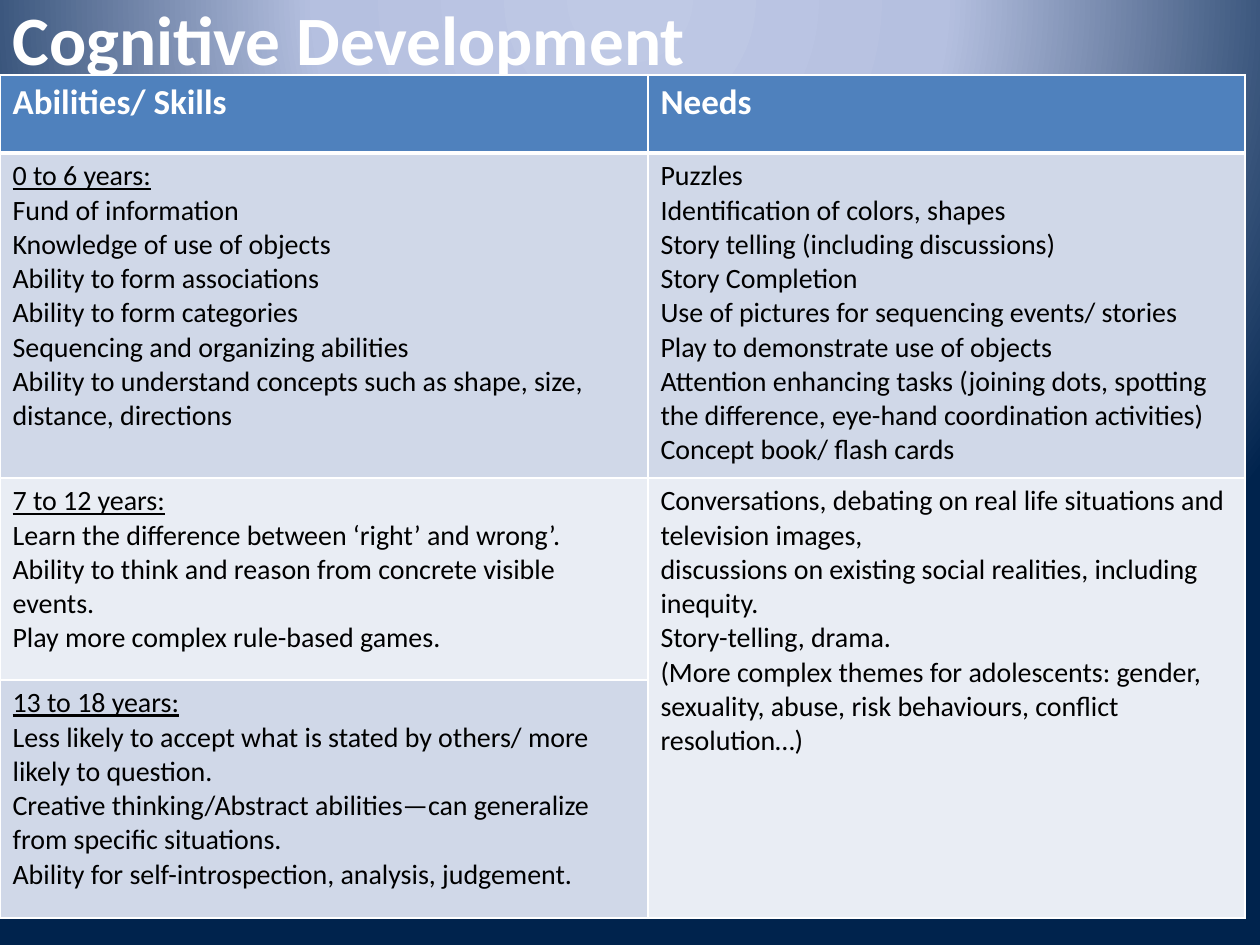
from lxml import etree
from pptx import Presentation
from pptx.dml.color import RGBColor
from pptx.enum.text import MSO_ANCHOR
from pptx.oxml import parse_xml
from pptx.oxml.ns import nsdecls
from pptx.util import Pt

PX = 914400 // 126
FONT = "Calibri"
TITLE = "Cognitive Development"
HEADER = ("Abilities/ Skills", "Needs")
AGES = [
    ("0 to 6 years:", "Fund of information", "Knowledge of use of objects",
     "Ability to form associations", "Ability to form categories",
     "Sequencing and organizing abilities",
     "Ability to understand concepts such as shape, size, distance, directions"),
    ("7 to 12 years:", "Learn the difference between ‘right’ and wrong’.",
     "Ability to think and reason from concrete visible events.",
     "Play more complex rule-based games."),
    ("13 to 18 years:",
     "Less likely to accept what is stated by others/ more likely to question.",
     "Creative thinking/Abstract abilities—can generalize from specific situations.",
     "Ability for self-introspection, analysis, judgement."),
]
NEEDS = [
    ("Puzzles", "Identification of colors, shapes",
     "Story telling (including discussions)", "Story Completion",
     "Use of pictures for sequencing events/ stories",
     "Play to demonstrate use of objects",
     "Attention enhancing tasks (joining dots, spotting the difference, "
     "eye-hand coordination activities)",
     "Concept book/ flash cards"),
    ("Conversations, debating on real life situations and television images,",
     "discussions on existing social realities, including inequity.",
     "Story-telling, drama.",
     "(More complex themes for adolescents: gender, sexuality, abuse, "
     "risk behaviours, conflict resolution…)"),
    (),
]
COLS = (648, 597)
ROWS = (78, 325, 202, 238)
FILLS = ("4F81BD", "D0D8E8", "E9EDF4", "D0D8E8")
STOPS = ((0, "BFC9E5"), (40, "B5C0E0"), (100, "00234D"))


def rgb(color):
    return RGBColor.from_string(color)


def set_background(s):
    fill = s.background.fill
    fill.gradient()
    stops = "".join(f'<a:gs pos="{pos * 1000}"><a:srgbClr val="{c}"/></a:gs>'
                    for pos, c in STOPS)
    grad = parse_xml(
        f'<a:gradFill {nsdecls("a")} rotWithShape="1"><a:gsLst>{stops}</a:gsLst>'
        '<a:path path="circle"><a:fillToRect l="50000" t="-80000" r="50000" '
        'b="180000"/></a:path></a:gradFill>')
    old = s.background.fill._xPr.gradFill
    old.getparent().replace(old, grad)


def write(tf, lines, size, color, bold=False):
    for i, line in enumerate(lines):
        p = tf.paragraphs[0] if i == 0 else tf.add_paragraph()
        p.text = line
        font = p.font
        font.name, font.size, font.bold = FONT, Pt(size), bold
        font.color.rgb = rgb(color)


def set_borders(cell, top, bottom):
    tc_pr = cell._tc.get_or_add_tcPr()
    for side, width in (("L", 1), ("R", 1), ("T", top), ("B", bottom)):
        tc_pr.append(parse_xml(
            f'<a:ln{side} {nsdecls("a")} w="{Pt(width)}"><a:solidFill>'
            f'<a:srgbClr val="FFFFFF"/></a:solidFill></a:ln{side}>'))


def add_title(s):
    tf = s.shapes.add_textbox(0, 0, 1134 * PX, 75 * PX).text_frame
    tf.word_wrap = True
    tf.vertical_anchor = MSO_ANCHOR.MIDDLE
    write(tf, [TITLE], 39.6, "FFFFFF", True)


def add_grid(s):
    table = s.shapes.add_table(len(ROWS), len(COLS), 0, 75 * PX,
                               sum(COLS) * PX, sum(ROWS) * PX).table
    for col, width in zip(table.columns, COLS):
        col.width = width * PX
    for row, height in zip(table.rows, ROWS):
        row.height = height * PX
    table.cell(2, 1).merge(table.cell(3, 1))
    body = [[(text,) for text in HEADER], *zip(AGES, NEEDS)]
    for r, (texts, fill) in enumerate(zip(body, FILLS)):
        for c, lines in enumerate(texts):
            cell = table.cell(r, c)
            set_borders(cell, 3 if r == 1 else 1, 3 if r == 0 else 1)
            cell.fill.solid()
            cell.fill.fore_color.rgb = rgb(FILLS[2] if r == 3 and c == 1 else fill)
            if r == 0:
                write(cell.text_frame, lines, 20, "FFFFFF", True)
            else:
                write(cell.text_frame, lines, 16, "000000")
                if c == 0:
                    cell.text_frame.paragraphs[0].runs[0].font.underline = True


def main():
    """Build the slide on cognitive development by age group."""
    prs = Presentation()
    prs.slide_width, prs.slide_height = 1260 * PX, 945 * PX
    s = prs.slides.add_slide(prs.slide_layouts[6])
    set_background(s)
    add_title(s)
    add_grid(s)
    prs.save("out.pptx")


if __name__ == "__main__":
    main()
